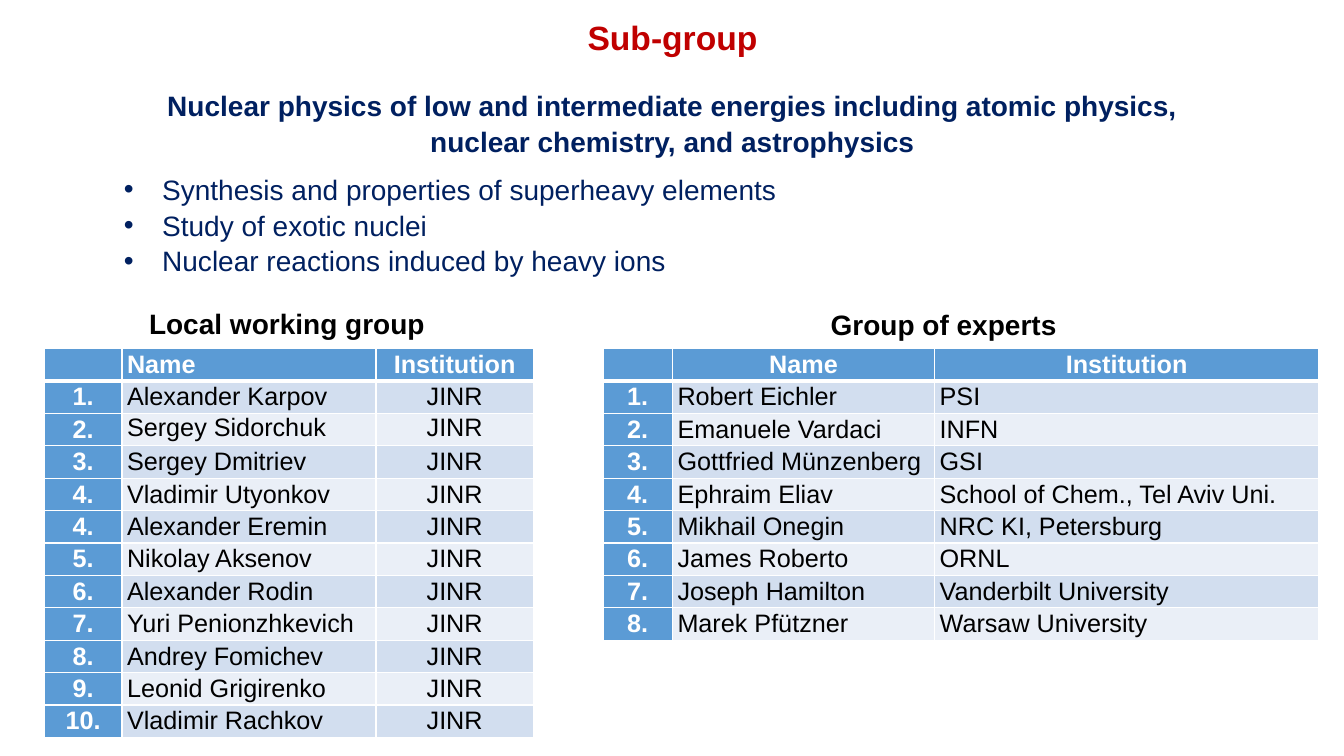
from dataclasses import dataclass

import lxml.etree
import pptx
import pptx.dml.color
import pptx.enum.text
import pptx.oxml.ns
import pptx.util

Inches = pptx.util.Inches
Pt = pptx.util.Pt
ALIGN = pptx.enum.text.PP_ALIGN
ANCHOR = pptx.enum.text.MSO_ANCHOR
FIT = pptx.enum.text.MSO_AUTO_SIZE

COLORS = {
    "title": "C00000",
    "topic": "002060",
    "text": "000000",
    "white": "FFFFFF",
    "header": "5B9BD5",
    "odd": "D2DEEF",
    "even": "EAEFF7",
}
ROW_HEIGHT = 0.32
TABLE_TOP = 3.46


@dataclass
class Line:
    text: str
    size: int = 20
    color: str = "text"
    bold: bool = False
    align: ALIGN = ALIGN.LEFT
    spacing: float = 1.0
    after: int = 0
    bullet: bool = False


@dataclass
class TextBox:
    left: float
    top: float
    width: float
    height: float
    lines: list[Line]
    wrap: bool = True
    anchor: ANCHOR = ANCHOR.TOP
    fit: FIT = FIT.SHAPE_TO_FIT_TEXT


@dataclass
class Roster:
    left: float
    widths: list[float]
    name_align: ALIGN
    institution_align: ALIGN
    members: list[tuple[str, str, str]]
    single_spaced: tuple[str, ...] = ()


def set_values(target: object, values: dict[str, object]) -> None:
    for name, value in values.items():
        setattr(target, name, value)


def write_line(para, line: Line) -> None:
    if line.bullet:
        properties = para._p.get_or_add_pPr()
        properties.set("marL", str(Inches(0.38)))
        properties.set("indent", str(-Inches(0.38)))
        font = lxml.etree.SubElement(properties, pptx.oxml.ns.qn("a:buFont"))
        font.set("typeface", "Arial")
        mark = lxml.etree.SubElement(properties, pptx.oxml.ns.qn("a:buChar"))
        mark.set("char", "•")
    set_values(para, {
        "alignment": line.align,
        "line_spacing": line.spacing,
        "space_before": Pt(0),
        "space_after": Pt(line.after),
    })
    span = para.add_run()
    span.text = line.text
    set_values(span.font, {"name": "Arial", "size": Pt(line.size), "bold": line.bold})
    span.font.color.rgb = pptx.dml.color.RGBColor.from_string(COLORS[line.color])


def draw_box(page, spec_box: TextBox) -> None:
    box = page.shapes.add_textbox(
        Inches(spec_box.left), Inches(spec_box.top),
        Inches(spec_box.width), Inches(spec_box.height))
    frame = box.text_frame
    set_values(frame, {
        "word_wrap": spec_box.wrap,
        "auto_size": spec_box.fit,
        "vertical_anchor": spec_box.anchor,
    })
    for index, line in enumerate(spec_box.lines):
        write_line(frame.add_paragraph() if index else frame.paragraphs[0], line)


def style_cell(cell, fill: str, bottom: int) -> None:
    set_values(cell, {
        "margin_left": Inches(0.05),
        "margin_right": Inches(0.05),
        "margin_top": 0,
        "margin_bottom": 0,
    })
    properties = cell._tc.get_or_add_tcPr()
    for side, width in {"L": 1, "R": 1, "T": 1, "B": bottom}.items():
        border = lxml.etree.SubElement(properties, pptx.oxml.ns.qn(f"a:ln{side}"))
        border.set("w", str(Pt(width)))
        solid = lxml.etree.SubElement(border, pptx.oxml.ns.qn("a:solidFill"))
        color = lxml.etree.SubElement(solid, pptx.oxml.ns.qn("a:srgbClr"))
        color.set("val", COLORS["white"])
    cell.fill.solid()
    cell.fill.fore_color.rgb = pptx.dml.color.RGBColor.from_string(COLORS[fill])


def draw_roster(page, roster: Roster) -> None:
    rows = [("", "Name", "Institution"), *roster.members]
    table = page.shapes.add_table(
        len(rows), len(roster.widths), Inches(roster.left), Inches(TABLE_TOP),
        Inches(sum(roster.widths)), Inches(ROW_HEIGHT * len(rows))).table
    for column, width in zip(table.columns, roster.widths):
        column.width = Inches(width)
    body_aligns = [ALIGN.CENTER, ALIGN.LEFT, roster.institution_align]
    header_aligns = [ALIGN.CENTER, roster.name_align, ALIGN.CENTER]
    for row_index, values in enumerate(rows):
        table.rows[row_index].height = Inches(ROW_HEIGHT)
        is_header = row_index == 0
        aligns = header_aligns if is_header else body_aligns
        for column_index, value in enumerate(values):
            cell = table.cell(row_index, column_index)
            strong = is_header or column_index == 0
            band = "odd" if row_index % 2 else "even"
            style_cell(cell, "header" if strong else band, 3 if is_header else 1)
            if value:
                single = values[1] in roster.single_spaced and column_index > 0
                write_line(cell.text_frame.paragraphs[0], Line(
                    value, 18, "white" if strong else "text", strong,
                    aligns[column_index], 1.0 if single else 1.07))


TOPICS = [
    "Synthesis and properties of superheavy elements",
    "Study of exotic nuclei",
    "Nuclear reactions induced by heavy ions",
]
BOXES = [
    TextBox(0.92, 0.1, 11.5, 0.59,
            [Line("Sub-group", 24, "title", True, ALIGN.CENTER, 0.9)],
            anchor=ANCHOR.MIDDLE, fit=FIT.NONE),
    TextBox(1.13, 0.81, 11.08, 2.01, [
        Line("Nuclear physics of low and intermediate energies including atomic physics, "
             "nuclear chemistry, and astrophysics",
             20, "topic", True, ALIGN.CENTER, 1.07, 8),
        *(Line(topic, color="topic", spacing=1.07, bullet=True,
               after=8 if topic == TOPICS[-1] else 0) for topic in TOPICS),
    ]),
    TextBox(1.38, 2.99, 2.96, 0.44, [Line("Local working group", bold=True)], wrap=False),
    TextBox(8.14, 3, 2.46, 0.44, [Line("Group of experts", bold=True)], wrap=False),
]
LOCAL_MEMBERS = [
    ("1.", "Alexander Karpov"),
    ("2.", "Sergey Sidorchuk"),
    ("3.", "Sergey Dmitriev"),
    ("4.", "Vladimir Utyonkov"),
    ("4.", "Alexander Eremin"),
    ("5.", "Nikolay Aksenov"),
    ("6.", "Alexander Rodin"),
    ("7.", "Yuri Penionzhkevich"),
    ("8.", "Andrey Fomichev"),
    ("9.", "Leonid Grigirenko"),
    ("10.", "Vladimir Rachkov"),
]
EXPERTS = [
    ("1.", "Robert Eichler", "PSI"),
    ("2.", "Emanuele Vardaci", "INFN"),
    ("3.", "Gottfried Münzenberg", "GSI"),
    ("4.", "Ephraim Eliav", "School of Chem., Tel Aviv Uni."),
    ("5.", "Mikhail Onegin", "NRC KI, Petersburg"),
    ("6.", "James Roberto", "ORNL"),
    ("7.", "Joseph Hamilton", "Vanderbilt University"),
    ("8.", "Marek Pfützner", "Warsaw University"),
]
ROSTERS = [
    Roster(5.98, [0.69, 2.6, 3.81], ALIGN.CENTER, ALIGN.LEFT, EXPERTS),
    Roster(0.44, [0.77, 2.52, 1.56], ALIGN.LEFT, ALIGN.CENTER,
           [(number, name, "JINR") for number, name in LOCAL_MEMBERS],
           ("Sergey Sidorchuk",)),
]


def main() -> None:
    deck = pptx.Presentation()
    set_values(deck, {"slide_width": Inches(13.33), "slide_height": Inches(7.5)})
    page = deck.slides.add_slide(deck.slide_layouts[6])
    for text_box in BOXES:
        draw_box(page, text_box)
    for roster in ROSTERS:
        draw_roster(page, roster)
    deck.save("out.pptx")


if __name__ == "__main__":
    main()
